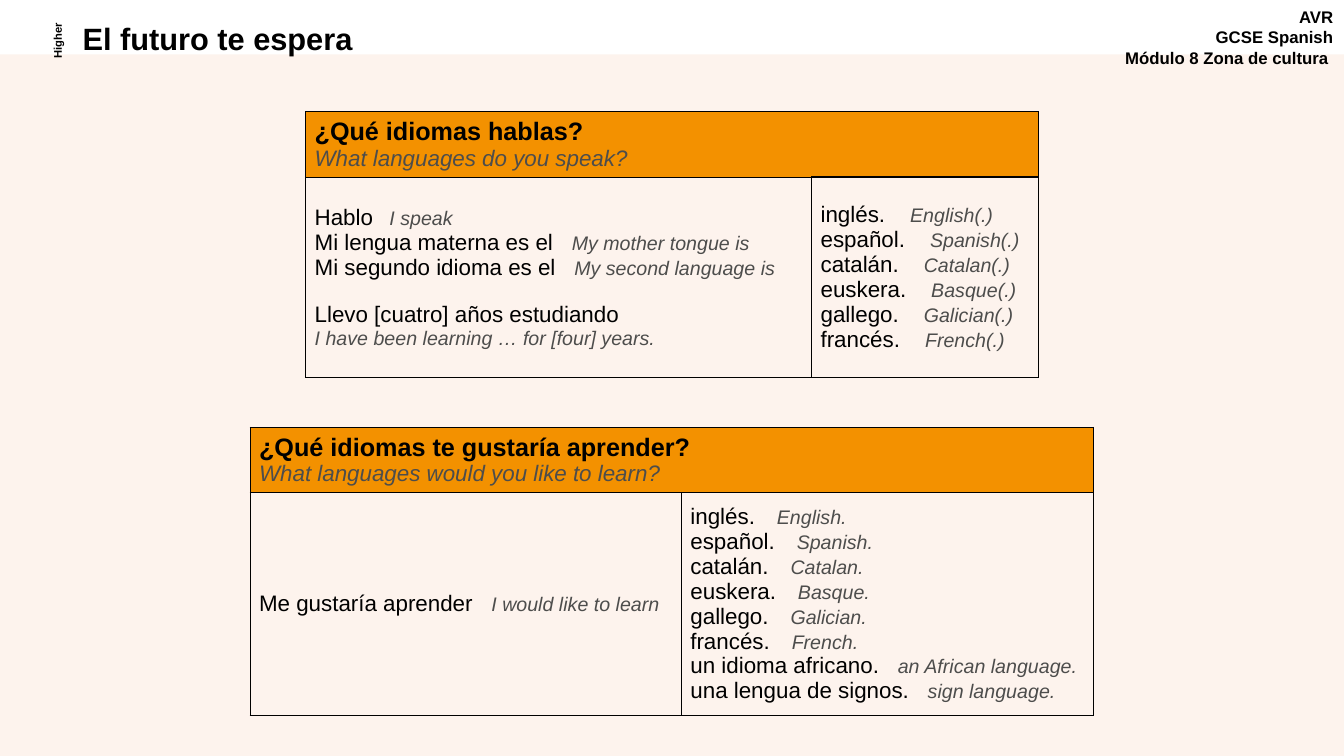
from pptx import Presentation
from pptx.dml.color import RGBColor as Rgb
from pptx.enum.shapes import MSO_SHAPE as Kind
from pptx.enum.text import MSO_ANCHOR as Anchor, PP_ALIGN as Align
from pptx.util import Cm, Pt
from lxml.etree import SubElement as Sub
from pptx.oxml.ns import qn

HEX = {"ink": "000000", "gray": "4D4D4C", "cream": "FDF3ED", "gold": "F39100"}
SPACE = 0.278  # width of a space in Arial, in ems


class Page:
    font = "Arial"

    def __init__(self, slide):
        self.slide = slide

    def style(self, run, size, color="ink", bold=False, slant=False):
        font = run.font
        font.name, font.size = self.font, Pt(size)
        font.bold, font.italic = bold, slant
        font.color.rgb = Rgb.from_string(HEX[color])

    def place(self, shape, left, top, width, height):
        shape.left, shape.top = Cm(left), Cm(top)
        shape.width, shape.height = Cm(width), Cm(height)

    def panel(self, color, *box):
        shape = self.slide.shapes.add_shape(Kind.RECTANGLE, *map(Cm, box))
        shape.shadow.inherit = False
        shape.fill.solid()
        shape.fill.fore_color.rgb = Rgb.from_string(HEX[color])
        shape.line.fill.background()
        shape.element.getparent().insert(2, shape.element)  # send to back

    def words(self, shape, text, size, align, anchor):
        frame = shape.text_frame
        frame.word_wrap = True
        frame.vertical_anchor = anchor
        frame.text = text
        for para in frame.paragraphs:
            para.alignment = align
            for run in para.runs:
                self.style(run, size, bold=True)

    def title(self, text, size, *box):
        shape = self.slide.shapes.title
        self.place(shape, *box)
        self.words(shape, text, size, Align.LEFT, Anchor.MIDDLE)
        shape.text_frame.paragraphs[0].line_spacing = 0.9

    def label(self, text, size, box, align, anchor=Anchor.TOP, turn=0):
        shape = self.slide.shapes.add_textbox(*map(Cm, box))
        shape.rotation = turn
        self.words(shape, text, size, align, anchor)

    def edges(self, cell, heavy):
        props = cell._tc.get_or_add_tcPr()
        for spot, side in enumerate("LRTB"):
            width = 1 if heavy and side in "TB" else 0.75
            line = Sub(props, qn(f"a:ln{side}"), w=str(Pt(width)))
            Sub(Sub(line, qn("a:solidFill")), qn("a:srgbClr"), val=HEX["ink"])
            props.insert(spot, line)

    def pair(self, para, word, sense, gap):
        """Spanish, then English in gray after one space widened to gap points."""
        if word:
            run = para.add_run()
            run.text = word
            self.style(run, 16)
        if word and sense:
            run = para.add_run()
            run.text = " "
            self.style(run, 14)
            run.font._element.set("spc", str(round(100 * (gap - SPACE * 14))))
        if sense:
            run = para.add_run()
            run.text = sense
            self.style(run, 14, "gray", slant=True)

    def fill(self, cell, lines):
        frame = cell.text_frame
        for spot, (word, sense, gap, above) in enumerate(lines):
            para = frame.add_paragraph() if spot else frame.paragraphs[0]
            if above:
                para.space_before = Pt(above)
            self.pair(para, word, sense, gap)

    def grid(self, left, top, cols, rows, head, body):
        shape = self.slide.shapes.add_table(
            2, 2, Cm(left), Cm(top), Cm(sum(cols)), Cm(sum(rows)))
        table = shape.table
        table.first_row = table.horz_banding = False
        for col, width in zip(table.columns, cols):
            col.width = Cm(width)
        for row, height in zip(table.rows, rows):
            row.height = Cm(height)
        top_cell = table.cell(0, 0)
        top_cell.merge(table.cell(0, 1))
        for spot, cell in enumerate(table.iter_cells()):
            cell.vertical_anchor = Anchor.MIDDLE
            cell.margin_left = cell.margin_right = Cm(0.23)
            cell.margin_top = cell.margin_bottom = Cm(0.1)
            if spot < 2:
                cell.fill.solid()
                cell.fill.fore_color.rgb = Rgb.from_string(HEX["gold"])
            else:
                cell.fill.background()
                self.fill(cell, body[spot - 2])
            self.edges(cell, spot == 3)
        # Heading: question and its meaning
        top_cell.text_frame.text = "\n".join(head)
        ask, sense = top_cell.text_frame.paragraphs
        self.style(ask.runs[0], 18, bold=True)
        self.style(sense.runs[0], 16, "gray", slant=True)


def line(word, sense="", gap=13.3, above=0):
    return word, sense, gap, above


TONGUES = [("inglés.", "English"), ("español.", "Spanish"),
           ("catalán.", "Catalan"), ("euskera.", "Basque"),
           ("gallego.", "Galician"), ("francés.", "French")]


def main():
    deck = Presentation()
    deck.slide_width, deck.slide_height = Cm(33.87), Cm(19.05)
    page = Page(deck.slides.add_slide(deck.slide_layouts[5]))

    # Background and header
    page.panel("cream", 0, 1.37, 33.87, 17.68)
    page.title("El futuro te espera", 22, 1.83, 0.48, 21.67, 1.09)
    page.label("AVR\nGCSE Spanish\nMódulo 8 Zona de cultura ", 12,
               (27.91, 0.05, 5.94, 1.96), Align.RIGHT)
    page.label("Higher", 8, (0.46, 0.74, 1.98, 0.56), Align.CENTER,
               Anchor.MIDDLE, 270)

    # Languages you speak
    speak = [line("Hablo", "I speak", 11.7),
             line("Mi lengua materna es el", "My mother tongue is"),
             line("Mi segundo idioma es el", "My second language is"),
             line("Llevo [cuatro] años estudiando", above=16),
             line("", "I have been learning … for [four] years.")]
    known = [line(word, f"{sense}(.)", 17.8) for word, sense in TONGUES]
    page.grid(7.7, 2.82, (12.75, 5.71), (1.57, 5.06),
              ("¿Qué idiomas hablas?", "What languages do you speak?"),
              (speak, known))

    # Languages you would like to learn
    wish = [line("Me gustaría aprender", "I would like to learn")]
    goals = [line(word, f"{sense}.", 15.6) for word, sense in TONGUES]
    goals += [line("un idioma africano.", "an African language."),
              line("una lengua de signos.", "sign language.")]
    page.grid(6.3, 10.77, (10.87, 10.39), (1.57, 5.23),
              ("¿Qué idiomas te gustaría aprender?",
               "What languages would you like to learn?"), (wish, goals))

    deck.save("out.pptx")


if __name__ == "__main__":
    main()
